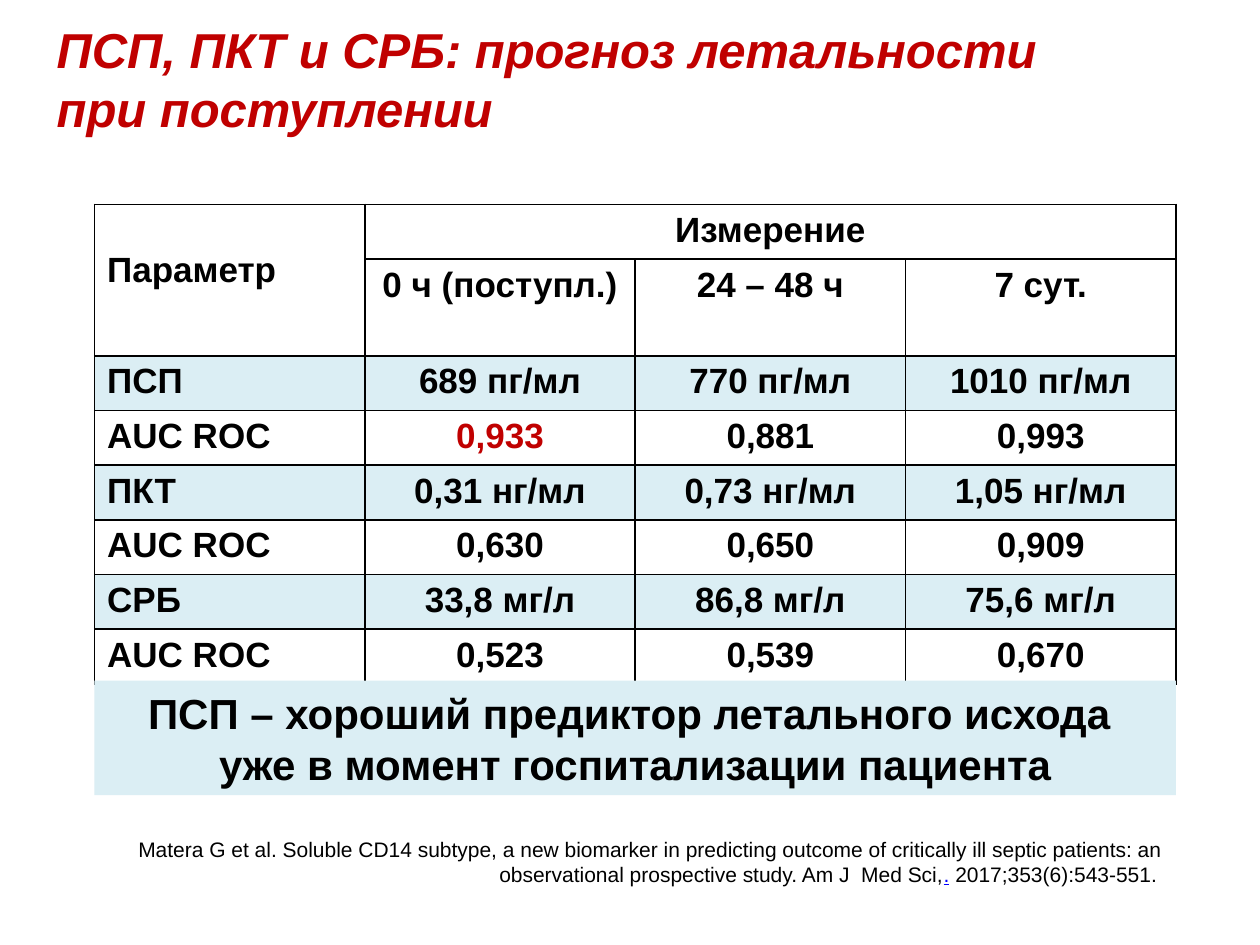
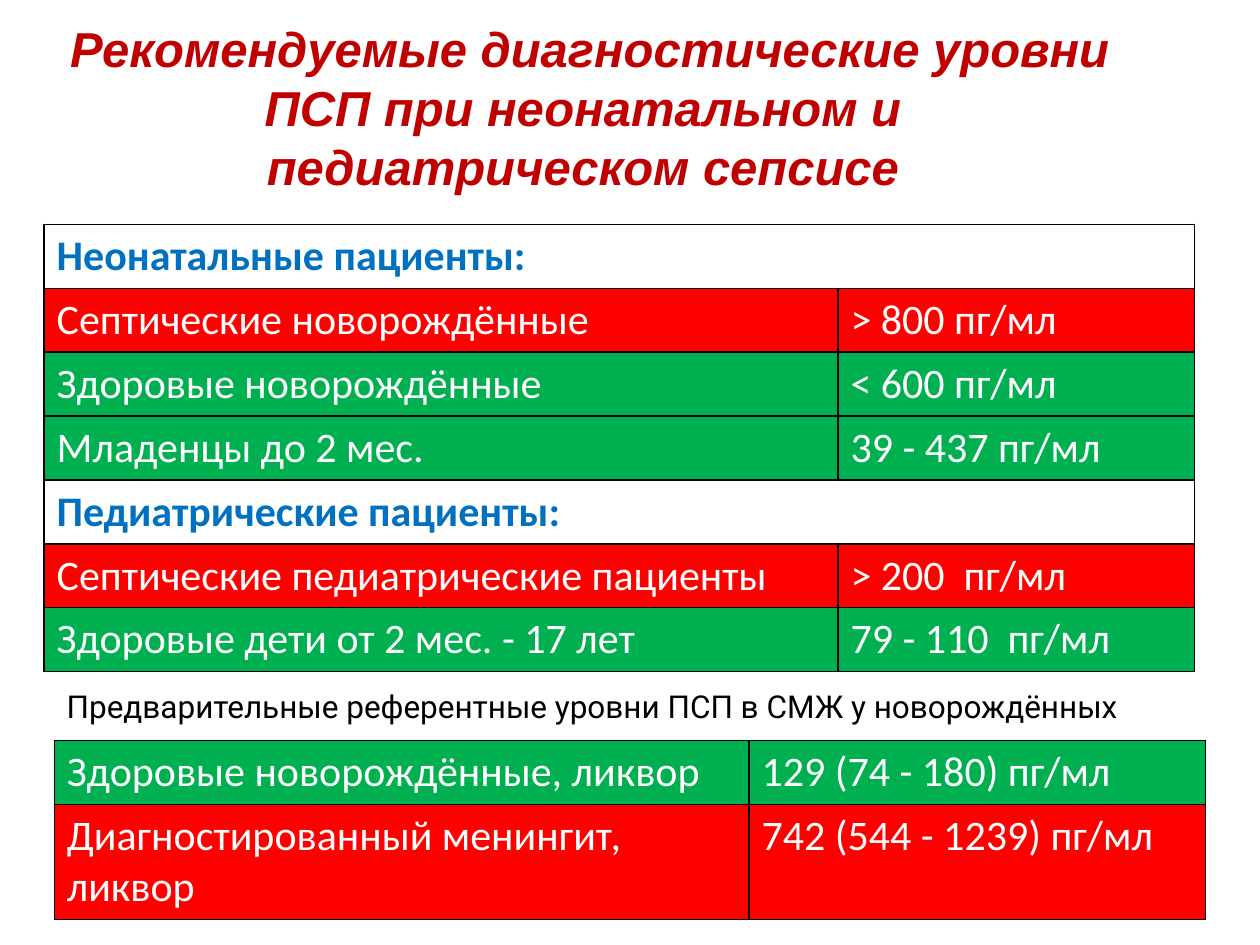
from lxml import etree
from pptx import Presentation
from pptx.dml.color import RGBColor as RGB
from pptx.enum.shapes import MSO_SHAPE as SHAPE
from pptx.enum.text import MSO_ANCHOR as ANCHOR, MSO_AUTO_SIZE as AUTO, PP_ALIGN as ALIGN
from pptx.oxml.ns import qn
from pptx.util import Pt

C = {"title": "C00000", "text": "000000", "band": "DBEEF4", "link": "0000FF",
     "group": "0070C0", "high": "FF0000", "normal": "00B050", "white": "FFFFFF"}


def write(tf, lines, size, font="Arial", color="text", bold=False, italic=False,
          align=ALIGN.LEFT):
    """Write lines, separated by line breaks, into the first paragraph."""
    tf.word_wrap = True
    p = tf.paragraphs[0]
    p.alignment = align
    for i, line in enumerate(lines):
        if i:
            p.add_line_break()
        r = p.add_run()
        r.text = line
        f = r.font
        f.size, f.name, f.bold, f.italic = Pt(size), font, bold, italic
        f.color.rgb = RGB.from_string(C[color])
    return p


def add_grid(s, left, top, widths, heights):
    """Add an unfilled table with thin black borders."""
    tbl = s.shapes.add_table(len(heights), len(widths), Pt(left), Pt(top),
                             Pt(sum(widths)), Pt(sum(heights))).table
    tbl.first_row = tbl.horz_banding = False
    for col, width in zip(tbl.columns, widths):
        col.width = Pt(width)
    for row, height in zip(tbl.rows, heights):
        row.height = Pt(height)
    for cell in tbl.iter_cells():
        cell.fill.background()
        tcPr = cell._tc.get_or_add_tcPr()
        for i, side in enumerate(("a:lnL", "a:lnR", "a:lnT", "a:lnB")):
            ln = etree.Element(qn(side), w=str(Pt(1)))
            fill = etree.SubElement(ln, qn("a:solidFill"))
            etree.SubElement(fill, qn("a:srgbClr"), val=C["text"])
            tcPr.insert(i, ln)
    return tbl


prs = Presentation()
prs.slide_width, prs.slide_height = Pt(720), Pt(540)

# Slides and their titles
titles = [
    (["ПСП, ПКТ и СРБ: прогноз летальности ", "при поступлении"], 648, 90, ALIGN.LEFT),
    (["Рекомендуемые диагностические уровни ПСП при неонатальном и  "
      "педиатрическом сепсисе "], 623.5, 122.4, ALIGN.CENTER),
]
for lines, width, height, align in titles:
    s = prs.slides.add_slide(prs.slide_layouts[5])
    sp = s.shapes.title
    sp.left, sp.top, sp.width, sp.height = Pt(25.2), Pt(0), Pt(width), Pt(height)
    tf = sp.text_frame
    tf.auto_size, tf.vertical_anchor = AUTO.NONE, ANCHOR.MIDDLE
    write(tf, lines, 28, color="title", bold=True, italic=True, align=align)
s1, s2 = prs.slides

# Slide 1: source reference
sp = s1.shapes.add_textbox(Pt(36.7), Pt(474.5), Pt(635), Pt(36))
p = write(sp.text_frame, ["Matera G et al. Soluble CD14 subtype, a new biomarker in predicting "
                          "outcome of critically ill septic patients: an observational "
                          "prospective study. Am J  Med Sci,"], 12, align=ALIGN.RIGHT)
for text, color in ((".", "link"), (" 2017;353(6):543-551. ", "text")):
    r = p.add_run()
    r.text = text
    r.font.size, r.font.name = Pt(12), "Arial"
    r.font.underline = color == "link"
    r.font.color.rgb = RGB.from_string(C[color])

# Slide 1: marker table
markers = [
    ("Параметр", "Измерение", "", ""),
    ("", "0 ч (поступл.)", "24 – 48 ч", "7 сут."),
    ("ПСП", "689 пг/мл", "770 пг/мл", "1010 пг/мл"),
    ("AUC ROC", "0,933", "0,881", "0,993"),
    ("ПКТ", "0,31 нг/мл", "0,73 нг/мл", "1,05 нг/мл"),
    ("AUC ROC", "0,630", "0,650", "0,909"),
    ("СРБ", "33,8 мг/л", "86,8 мг/л", "75,6 мг/л"),
    ("AUC ROC", "0,523", "0,539", "0,670"),
]
tbl = add_grid(s1, 54, 116.8, [154.5] * 4, [31.25, 55.3] + [31.25] * 6)
tbl.cell(0, 0).merge(tbl.cell(1, 0))
tbl.cell(0, 1).merge(tbl.cell(0, 3))
tbl.cell(0, 0).margin_top = Pt(26.6)
for i, row in enumerate(markers):
    for j, text in enumerate(row):
        cell = tbl.cell(i, j)
        if i >= 2 and i % 2 == 0:
            cell.fill.solid()
            cell.fill.fore_color.rgb = RGB.from_string(C["band"])
        if text:
            write(cell.text_frame, [text], 20, bold=True,
                  color="title" if text == "0,933" else "text",
                  align=ALIGN.CENTER if j else ALIGN.LEFT)

# Slide 1: conclusion
sp = s1.shapes.add_shape(SHAPE.RECTANGLE, Pt(54), Pt(389), Pt(618), Pt(65.4))
sp.shadow.inherit = False
sp.fill.solid()
sp.fill.fore_color.rgb = RGB.from_string(C["band"])
sp.line.fill.background()
sp.text_frame.vertical_anchor = ANCHOR.MIDDLE
write(sp.text_frame, ["ПСП – хороший предиктор летального исхода ",
                      "уже в момент госпитализации пациента"], 24, bold=True, align=ALIGN.CENTER)

# Slide 2: level tables, each row with its kind
blood = [
    ("group", "Неонатальные пациенты:"),
    ("high", "Септические новорождённые", "> 800 пг/мл"),
    ("normal", "Здоровые новорождённые", "< 600 пг/мл"),
    ("normal", "Младенцы до 2 мес.", "39 - 437 пг/мл"),
    ("group", "Педиатрические пациенты:"),
    ("high", "Септические педиатрические пациенты", "> 200  пг/мл"),
    ("normal", "Здоровые дети от 2 мес. - 17 лет", "79 - 110  пг/мл"),
]
liquor = [
    ("normal", "Здоровые новорождённые, ликвор", "129 (74 - 180) пг/мл"),
    ("high", "Диагностированный менингит, ликвор", "742 (544 - 1239) пг/мл"),
]
for levels, left, top, widths, heights in (
        (blood, 25.2, 128.2, [453.6, 203.8], [36.5] * 7),
        (liquor, 31, 423.2, [397, 261], [36.5, 65.8])):
    tbl = add_grid(s2, left, top, widths, heights)
    for i, (kind, *texts) in enumerate(levels):
        is_group = kind == "group"
        if is_group:
            tbl.cell(i, 0).merge(tbl.cell(i, 1))
        for j, text in enumerate(texts):
            cell = tbl.cell(i, j)
            if not is_group:
                cell.fill.solid()
                cell.fill.fore_color.rgb = RGB.from_string(C[kind])
            write(cell.text_frame, [text], 24, "Calibri",
                  "group" if is_group else "white", bold=is_group)

# Slide 2: heading of the lower table
sp = s2.shapes.add_textbox(Pt(31), Pt(389), Pt(658), Pt(29))
write(sp.text_frame, ["Предварительные референтные уровни ПСП в СМЖ у новорождённых"], 18, "Roboto")

prs.save("out.pptx")
